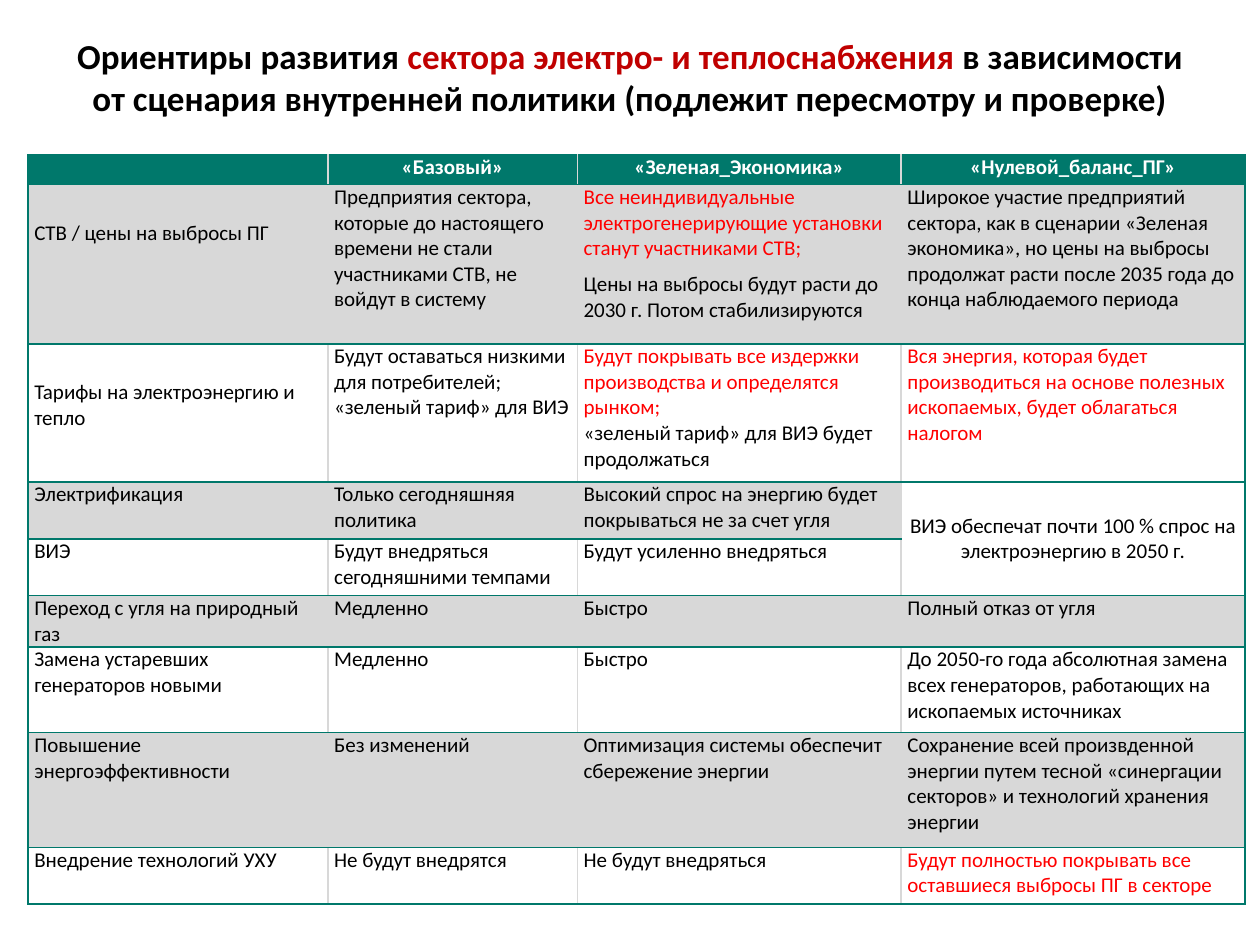
from dataclasses import dataclass

from lxml.etree import SubElement
from pptx import Presentation
from pptx.dml.color import RGBColor
from pptx.enum.text import MSO_ANCHOR, PP_ALIGN
from pptx.oxml.ns import qn
from pptx.util import Pt


@dataclass(frozen=True)
class Theme:
    """Colours and type sizes of the slide."""
    font: str = "Calibri"
    title_size: int = 20
    cell_size: int = 12
    text: str = "000000"
    white: str = "FFFFFF"
    accent: str = "C00000"
    alert: str = "FF0000"
    green: str = "00786B"
    grey: str = "D8D8D8"


@dataclass(frozen=True)
class Span:
    """A piece of text with its own colour."""
    text: str
    color: str


THEME = Theme()
COLUMN_WIDTHS = [171.36, 142.56, 185.04, 196.56]
ROW_HEIGHTS = [17, 91, 79, 32.5, 32.5, 17, 49, 65.5, 32.5]
SHADED_ROWS = {1, 3, 5, 7}
LOWERED_LABEL_ROWS = {1, 2}
LABEL_DROP = 20.65


def red(text):
    """Return a span in the alert colour."""
    return Span(text, THEME.alert)


TITLE = [
    "Ориентиры развития ",
    Span("сектора электро- и теплоснабжения ", THEME.accent),
    "в зависимости от сценария внутренней политики (подлежит пересмотру и проверке)",
]

ROWS = [
    ["", "«Базовый»", "«Зеленая_Экономика»", "«Нулевой_баланс_ПГ»"],
    ["СТВ / цены на выбросы ПГ",
     "Предприятия сектора, которые до настоящего времени не стали участниками СТВ, не войдут в систему",
     [[red("Все неиндивидуальные электрогенерирующие установки станут участниками СТВ;")],
      ["Цены на выбросы будут расти до 2030 г. Потом стабилизируются"]],
     "Широкое участие предприятий сектора, как в сценарии «Зеленая экономика», но цены на выбросы "
     "продолжат расти после 2035 года до конца наблюдаемого периода"],
    ["Тарифы на электроэнергию и тепло",
     [["Будут оставаться низкими для потребителей;", "«зеленый тариф» для ВИЭ"]],
     [[red("Будут покрывать все издержки производства и определятся рынком;"),
       "«зеленый тариф» для ВИЭ будет продолжаться"]],
     [[red("Вся энергия, которая будет производиться на основе полезных ископаемых, "
           "будет облагаться налогом")]]],
    ["Электрификация", "Только сегодняшняя политика",
     "Высокий спрос на энергию будет покрываться не за счет угля",
     "ВИЭ обеспечат почти 100 % спрос на электроэнергию в 2050 г."],
    ["ВИЭ", "Будут внедряться сегодняшними темпами", "Будут усиленно внедряться", ""],
    ["Переход с угля на природный газ", "Медленно", "Быстро", "Полный отказ от угля"],
    ["Замена устаревших генераторов новыми", "Медленно", "Быстро",
     "До 2050-го года абсолютная замена всех генераторов, работающих на ископаемых источниках"],
    ["Повышение энергоэффективности", "Без изменений",
     "Оптимизация системы обеспечит сбережение энергии",
     "Сохранение всей произвденной энергии путем тесной «синергации секторов» "
     "и технологий хранения энергии"],
    ["Внедрение технологий УХУ", "Не будут внедрятся", "Не будут внедряться",
     [[red("Будут полностью покрывать все оставшиеся выбросы ПГ в секторе")]]],
]


def format_paragraph(para, size, color, bold, align):
    """Set the font and alignment shared by all runs of a paragraph."""
    para.alignment = align
    para.font.name = THEME.font
    para.font.size = Pt(size)
    para.font.bold = bold
    para.font.color.rgb = RGBColor.from_string(color)


def add_span(para, span):
    """Append a plain string or a coloured span to a paragraph."""
    run = para.add_run()
    if isinstance(span, Span):
        run.text = span.text
        run.font.color.rgb = RGBColor.from_string(span.color)
    else:
        run.text = span


def add_title(page):
    """Place and write the slide title."""
    title = page.shapes.title
    title.left, title.top, title.width, title.height = Pt(36), Pt(15), Pt(648), Pt(57)
    frame = title.text_frame
    frame.word_wrap = True
    frame.vertical_anchor = MSO_ANCHOR.MIDDLE
    para = frame.paragraphs[0]
    format_paragraph(para, THEME.title_size, THEME.text, True, PP_ALIGN.CENTER)
    for span in TITLE:
        add_span(para, span)


def write_cell(cell, content, color, bold, align):
    """Write a string, or a list of paragraphs made of lines, into a cell."""
    paragraphs = [[content]] if isinstance(content, str) else content
    frame = cell.text_frame
    for index, lines in enumerate(paragraphs):
        para = frame.add_paragraph() if index else frame.paragraphs[0]
        format_paragraph(para, THEME.cell_size, color, bold, align)
        para.space_before = para.space_after = Pt(3)
        for number, line in enumerate(lines):
            if number:
                para.add_line_break()
            if line:
                add_span(para, line)


def set_borders(cell, left, right):
    """Draw the four cell borders, green above and below."""
    properties = cell._tc.get_or_add_tcPr()
    sides = {"a:lnL": left, "a:lnR": right, "a:lnT": THEME.green, "a:lnB": THEME.green}
    for tag, color in sides.items():
        line = SubElement(properties, qn(tag), w=str(Pt(1)))
        fill = SubElement(line, qn("a:solidFill"))
        SubElement(fill, qn("a:srgbClr"), val=color)


def set_fill(cell, color):
    """Fill a cell, or leave it clear when there is no colour."""
    if color:
        cell.fill.solid()
        cell.fill.fore_color.rgb = RGBColor.from_string(color)
    else:
        cell.fill.background()


def format_cell(cell, row, column):
    """Set insets, borders and fill according to the place of a cell."""
    cell.margin_left = cell.margin_right = Pt(3.6)
    lowered = column == 0 and row in LOWERED_LABEL_ROWS
    cell.margin_top = Pt(LABEL_DROP if lowered else 0)
    cell.margin_bottom = Pt(0)
    last = len(COLUMN_WIDTHS) - 1
    set_borders(cell, THEME.grey if column else THEME.green,
                THEME.grey if column < last else THEME.green)
    shade = THEME.grey if row in SHADED_ROWS and not cell.is_merge_origin else None
    set_fill(cell, shade if row else THEME.green)
    if cell.is_merge_origin:
        cell.vertical_anchor = MSO_ANCHOR.MIDDLE


def add_scenario_table(page):
    """Build the table that compares the policy scenarios."""
    frame = page.shapes.add_table(len(ROWS), len(COLUMN_WIDTHS), Pt(16), Pt(88.5),
                                  Pt(sum(COLUMN_WIDTHS)), Pt(sum(ROW_HEIGHTS)))
    table = frame.table
    table.horz_banding = False
    for column, width in zip(table.columns, COLUMN_WIDTHS):
        column.width = Pt(width)
    for row, height in zip(table.rows, ROW_HEIGHTS):
        row.height = Pt(height)
    table.cell(3, 3).merge(table.cell(4, 3))
    for row, contents in enumerate(ROWS):
        for column, content in enumerate(contents):
            cell = table.cell(row, column)
            format_cell(cell, row, column)
            centered = row == 0 or cell.is_merge_origin
            write_cell(cell, content, THEME.text if row else THEME.white, row == 0,
                       PP_ALIGN.CENTER if centered else PP_ALIGN.LEFT)


def main():
    """Build and save the one-page deck."""
    deck = Presentation()
    deck.slide_width, deck.slide_height = Pt(720), Pt(540)
    page = deck.slides.add_slide(deck.slide_layouts[5])
    add_title(page)
    add_scenario_table(page)
    deck.save("out.pptx")


if __name__ == "__main__":
    main()
